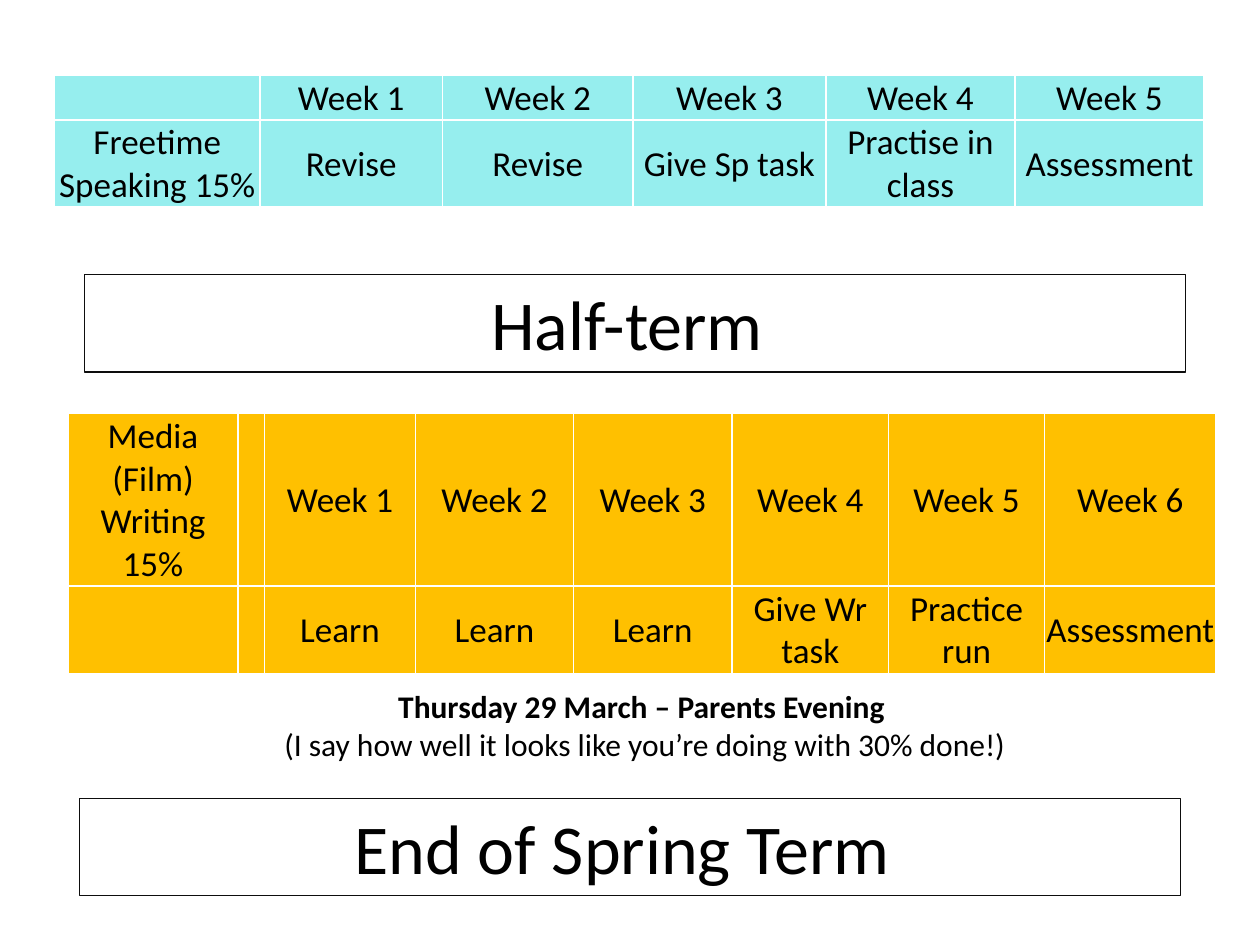
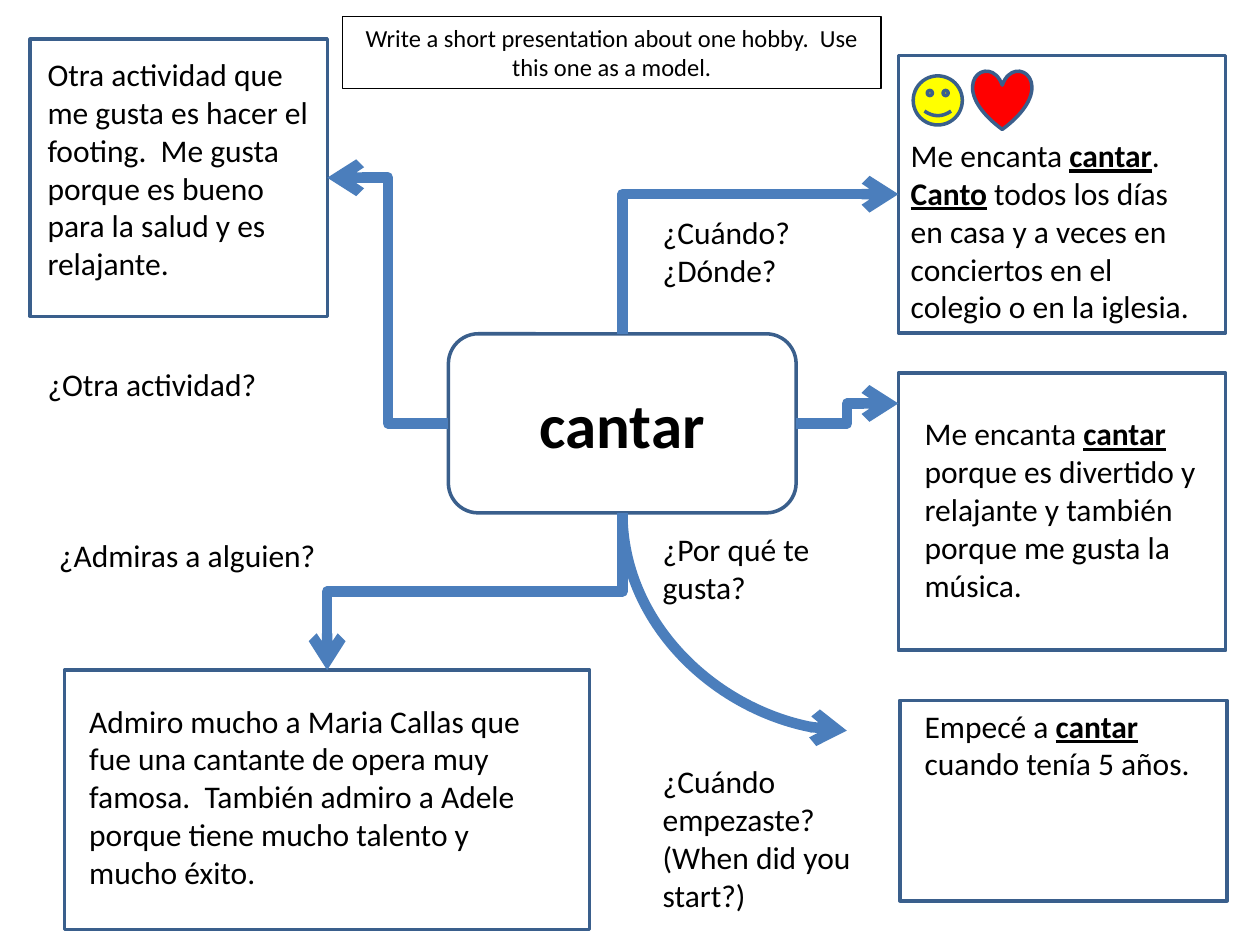
from dataclasses import dataclass

from lxml.etree import SubElement
from pptx import Presentation
from pptx.dml.color import RGBColor
from pptx.enum.shapes import MSO_CONNECTOR, MSO_SHAPE
from pptx.enum.text import MSO_ANCHOR, MSO_AUTO_SIZE, PP_ALIGN
from pptx.oxml.ns import qn
from pptx.util import Cm, Pt

FONT = "Calibri"
BLACK = "000000"
FRAME = "3A5F8C"
ARROW = "4B7EBC"
BANNER_LINE = "0D0D0D"
AQUA = "96EEEE"
AMBER = "FFC000"


@dataclass
class Box:
    """A rectangle in centimetres."""
    left: float
    top: float
    width: float
    height: float

    def inner(self, left, top, width, height):
        """Return a box whose corner is measured from this box's corner."""
        return Box(self.left + left, self.top + top, width, height)

    def point(self, across, down):
        """Return the point at the given shares of width and height."""
        return self.left + across * self.width, self.top + down * self.height

    def lengths(self):
        return Cm(self.left), Cm(self.top), Cm(self.width), Cm(self.height)


def colour(hex_code):
    return RGBColor.from_string(hex_code)


def style_paragraph(para, size, align, bold=None):
    para.alignment = align
    para.font.name = FONT
    para.font.size = Pt(size)
    para.font.bold = bold
    para.font.color.rgb = colour(BLACK)


def set_line(shape, hex_code, width):
    shape.line.color.rgb = colour(hex_code)
    shape.line.width = Pt(width)


def add_text(page, box, text, size=18, align=PP_ALIGN.LEFT, underline=True):
    """Add a text box; words between asterisks are bold, and underlined if asked."""
    label = page.shapes.add_textbox(*box.lengths())
    frame = label.text_frame
    frame.word_wrap = True
    frame.auto_size = MSO_AUTO_SIZE.SHAPE_TO_FIT_TEXT
    para = frame.paragraphs[0]
    style_paragraph(para, size, align)
    for number, piece in enumerate(text.split("*")):
        for row, line in enumerate(piece.split("\n")):
            if row:
                para.add_line_break()
            if line:
                span = para.add_run()
                span.text = line
                if number % 2:
                    span.font.bold = True
                    span.font.underline = underline
    return label


def add_banner(page, box, text, size=40, line=BANNER_LINE):
    banner = add_text(page, box, text, size, PP_ALIGN.CENTER)
    set_line(banner, line, 0.75)


def add_framed_shape(page, kind, box, fill=None):
    shape = page.shapes.add_shape(kind, *box.lengths())
    shape.shadow.inherit = False
    if fill:
        shape.fill.solid()
        shape.fill.fore_color.rgb = colour(fill)
    else:
        shape.fill.background()
    set_line(shape, FRAME, 2)
    return shape


def add_schedule(page, left, top, widths, heights, rows, fill):
    box = Box(left, top, sum(widths), sum(heights))
    table = page.shapes.add_table(len(rows), len(widths), *box.lengths()).table
    table.first_row = False
    table.horz_banding = False
    for column, width in zip(table.columns, widths):
        column.width = Cm(width)
    for row, height, texts in zip(table.rows, heights, rows):
        row.height = Cm(height)
        for cell, text in zip(row.cells, texts):
            cell.text = text
            cell.fill.solid()
            cell.fill.fore_color.rgb = colour(fill)
            cell.vertical_anchor = MSO_ANCHOR.MIDDLE
            cell.margin_left = cell.margin_right = cell.margin_top = Cm(0.03)
            cell.margin_bottom = 0
            style_paragraph(cell.text_frame.paragraphs[0], 20, PP_ALIGN.CENTER)


def add_arrow(page, begin, end, preset="bentConnector3", turn=0):
    """Join two points; a turn of 90 or 270 makes the arrow set off vertically."""
    if turn:
        middle_x, middle_y = (begin[0] + end[0]) / 2, (begin[1] + end[1]) / 2
        sign = 1 if turn == 90 else -1
        half_x = sign * (end[1] - begin[1]) / 2
        half_y = sign * (begin[0] - end[0]) / 2
        begin = middle_x - half_x, middle_y - half_y
        end = middle_x + half_x, middle_y + half_y
    arrow = page.shapes.add_connector(
        MSO_CONNECTOR.ELBOW, *(Cm(value) for value in (*begin, *end)))
    set_line(arrow, ARROW, 6)
    properties = arrow.element.spPr
    properties.find(qn("a:prstGeom")).set("prst", preset)
    if turn:
        properties.find(qn("a:xfrm")).set("rot", str(turn * 60000))
    SubElement(properties.find(qn("a:ln")), qn("a:tailEnd"), type="arrow")
    SubElement(properties, qn("a:effectLst"))


def build_term_plan(page, box):
    weeks = [f"Week {number}" for number in range(1, 7)]
    add_schedule(
        page, box.left + 1.1, box.top + 1.52,
        [4.14, 3.68, 3.84, 3.89, 3.81, 3.81], [0.86, 1.72],
        [["", *weeks[:5]],
         ["Freetime Speaking 15%", "Revise", "Revise", "Give Sp task",
          "Practise in class", "Assessment"]], AQUA)
    add_schedule(
        page, box.left + 1.37, box.top + 8.33,
        [3.43, 0.53, 3.05, 3.18, 3.2, 3.15, 3.15, 3.45], [3.4, 1.72],
        [["Media (Film) Writing 15%", "", *weeks],
         ["", "", "Learn", "Learn", "Learn", "Give Wr task", "Practice run",
          "Assessment"]], AMBER)
    add_banner(page, box.inner(1.7, 5.54, 22.2, 1.96), "Half-term ")
    add_banner(page, box.inner(1.6, 16.1, 22.2, 1.96), "End of Spring Term ")
    add_text(page, box.inner(1.5, 13.72, 23.01, 1.8),
             "*Thursday 29 March – Parents Evening \n*"
             "(I say how well it looks like you’re doing with 30% done!)",
             align=PP_ALIGN.CENTER, underline=False)


def add_card(page, box, text_box, text):
    """Add a frame and its text; return the frame's box."""
    add_framed_shape(page, MSO_SHAPE.RECTANGLE, box)
    add_text(page, box.inner(*text_box), text)
    return box


def build_hobby_map(page, box):
    hub = box.inner(9.04, 6.73, 7.01, 3.61)
    topic = add_framed_shape(page, MSO_SHAPE.ROUNDED_RECTANGLE, hub)
    topic.text_frame.text = "cantar"
    topic.text_frame.vertical_anchor = MSO_ANCHOR.MIDDLE
    style_paragraph(topic.text_frame.paragraphs[0], 36, PP_ALIGN.CENTER, True)

    when = add_card(
        page, box.inner(18.11, 1.12, 6.6, 5.59), (0, 1.5, 6.32, 4.11),
        "Me encanta *cantar*. *Canto* todos los días en casa y a veces en "
        "conciertos en el colegio o en la iglesia.")
    add_framed_shape(page, MSO_SHAPE.SMILEY_FACE,
                     when.inner(0.3, 0.41, 0.99, 0.99), "FFFF00")
    add_framed_shape(page, MSO_SHAPE.HEART,
                     when.inner(1.5, 0.3, 1.19, 1.19), "FF0000")
    why = add_card(
        page, box.inner(18.11, 7.52, 6.6, 5.59), (0.28, 0.71, 6.32, 4.11),
        "Me encanta *cantar *porque es divertido y relajante y también "
        "porque me gusta la música.")
    add_card(
        page, box.inner(18.14, 14.12, 6.6, 4.04), (0.25, 0, 6.32, 1.8),
        "Empecé a *cantar *cuando tenía 5 años.")
    admired = add_card(
        page, box.inner(1.3, 13.51, 10.59, 5.23), (0.25, 0.51, 9.96, 4.11),
        "Admiro mucho a Maria Callas que fue una cantante de opera muy "
        "famosa.  También admiro a Adele porque tiene mucho talento y "
        "mucho éxito.")
    other = add_card(
        page, box.inner(0.61, 0.79, 5.99, 5.59), (0.1, 0.2, 5.82, 4.88),
        "Otra actividad que me gusta es hacer el footing.  Me gusta porque "
        "es bueno para la salud y es relajante.")

    add_arrow(page, hub.point(0.5, 0), when.point(0, 0.5), "bentConnector2", 90)
    add_arrow(page, hub.point(1, 0.5), why.point(0, 0.11))
    add_arrow(page, hub.point(0.5, 1), (box.left + 17.07, box.top + 14.73),
              "curvedConnector2", 270)
    add_arrow(page, hub.point(0, 0.5), other.point(1, 0.5))
    add_arrow(page, hub.point(0.5, 1), admired.point(0.5, 0), turn=90)

    add_banner(page, box.inner(6.91, 0.33, 10.85, 1.45),
               "Write a short presentation about one hobby.  "
               "Use this one as a model.", 14, BLACK)
    questions = [
        (13.11, 4.17, 3.81, 1.8, "¿Cuándo?\n¿Dónde?"),
        (13.11, 10.57, 4.85, 1.8, "¿Por qué te gusta?"),
        (13.11, 15.24, 4.85, 3.33, "¿Cuándo empezaste? (When did you start?)"),
        (0.94, 10.69, 9.47, 1.02, "¿Admiras a alguien?"),
        (0.71, 7.24, 6.81, 1.02, "¿Otra actividad?"),
    ]
    for *place, question in questions:
        add_text(page, box.inner(*place), question)


def main():
    deck = Presentation()
    whole_page = Box(0, 0, 25.4, 19.05)
    deck.slide_width = Cm(whole_page.width)
    deck.slide_height = Cm(whole_page.height)
    blank = deck.slide_layouts.get_by_name("Blank")
    for build in (build_term_plan, build_hobby_map):
        build(deck.slides.add_slide(blank), whole_page)
    deck.save("out.pptx")


if __name__ == "__main__":
    main()
